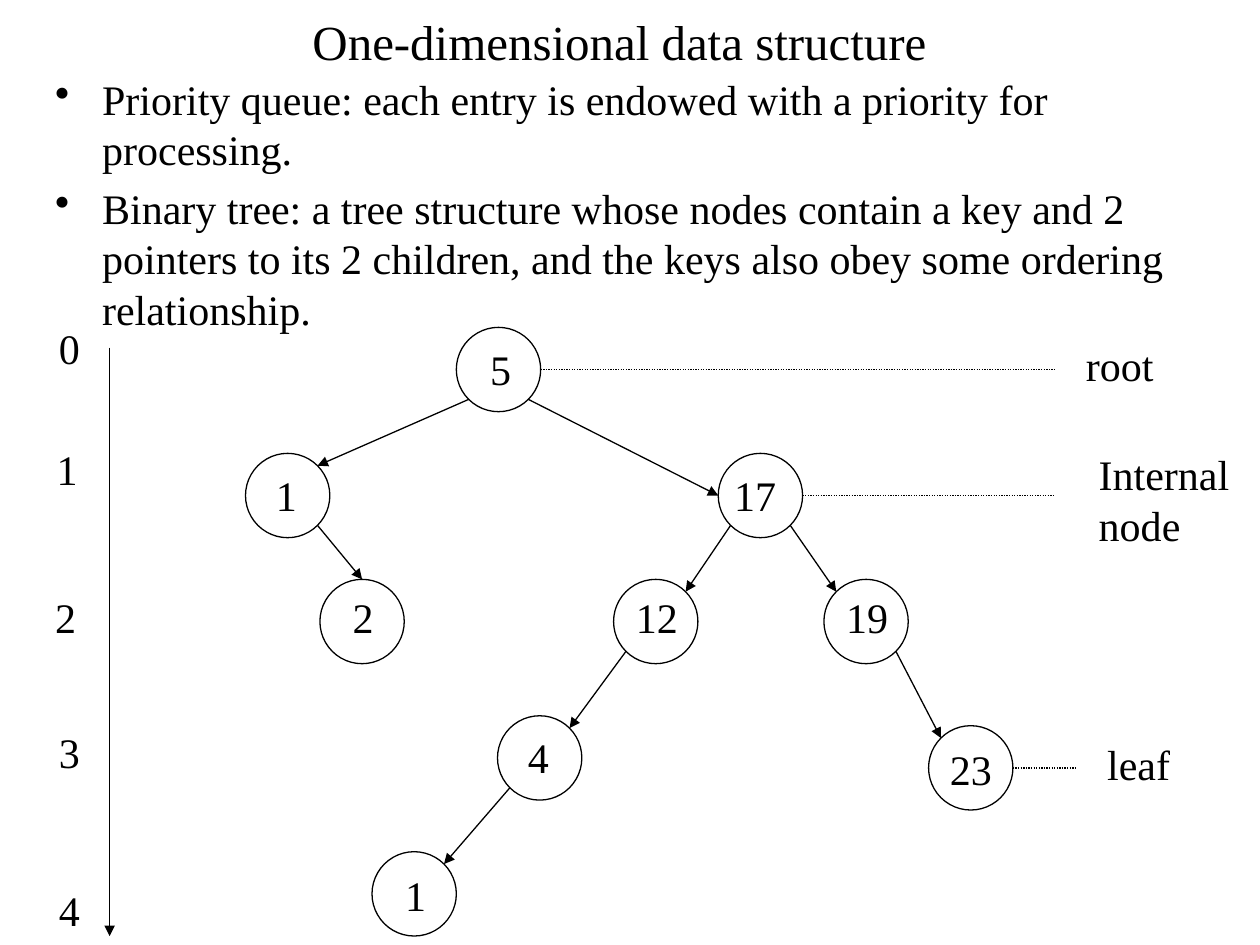
from dataclasses import dataclass
from math import sqrt

from lxml import etree
from pptx import Presentation
from pptx.dml.color import RGBColor
from pptx.enum.dml import MSO_LINE
from pptx.enum.shapes import MSO_CONNECTOR, MSO_SHAPE
from pptx.enum.text import MSO_ANCHOR, MSO_AUTO_SIZE, PP_ALIGN
from pptx.oxml.ns import qn
from pptx.util import Cm, Pt

STRAIGHT = MSO_CONNECTOR.STRAIGHT
OVAL = MSO_SHAPE.OVAL
DOTTED = MSO_LINE.ROUND_DOT
FIT_SHAPE = MSO_AUTO_SIZE.SHAPE_TO_FIT_TEXT
MIDDLE = MSO_ANCHOR.MIDDLE
CENTER = PP_ALIGN.CENTER

COLORS = {"ink": "000000", "background": "FFFFFF"}
FONT = "Times New Roman"
TEXT_SIZE = 24
DIAMETER = 1.7
LABEL_HEIGHT = 1.27
DIAGONAL = 1 / sqrt(2)

# Directions from a node's centre to points on its circle
SITES = {
    "top": (0, -1),
    "left": (-1, 0),
    "right": (1, 0),
    "top right": (DIAGONAL, -DIAGONAL),
    "top left": (-DIAGONAL, -DIAGONAL),
    "bottom left": (-DIAGONAL, DIAGONAL),
    "bottom right": (DIAGONAL, DIAGONAL),
}


@dataclass(frozen=True)
class Node:
    key: str
    left: float
    top: float
    label_left: float
    label_top: float

    def site(self, name: str) -> tuple[float, float]:
        radius = DIAMETER / 2
        across, down = SITES[name]
        return self.left + radius * (1 + across), self.top + radius * (1 + down)


@dataclass(frozen=True)
class Edge:
    parent: str
    parent_site: str
    child: str
    child_site: str


@dataclass(frozen=True)
class Callout:
    node: str
    line_end: float
    lines: tuple[str, ...]
    left: float
    top: float
    width: float


TITLE = "One-dimensional data structure"
BULLETS = (
    "Priority queue: each entry is endowed with a priority for processing.",
    "Binary tree: a tree structure whose nodes contain a key and 2 pointers to its "
    "2 children, and the keys also obey some ordering relationship.",
)
NODES = {
    "root": Node("5", 9.2, 6.6, 9.63, 6.81),
    "one": Node("1", 4.95, 9.14, 5.31, 9.35),
    "seventeen": Node("17", 14.48, 9.14, 14.55, 9.35),
    "two": Node("2", 6.45, 11.68, 6.86, 11.79),
    "twelve": Node("12", 12.37, 11.68, 12.57, 11.79),
    "nineteen": Node("19", 16.61, 11.68, 16.81, 11.79),
    "four": Node("4", 10.03, 14.43, 10.39, 14.63),
    "lowest": Node("1", 7.5, 17.17, 7.92, 17.4),
    "twenty-three": Node("23", 18.72, 14.63, 18.9, 14.86),
}
EDGES = (
    Edge("root", "bottom left", "one", "top right"),
    Edge("root", "bottom right", "seventeen", "left"),
    Edge("one", "bottom right", "two", "top"),
    Edge("seventeen", "bottom left", "twelve", "top right"),
    Edge("seventeen", "bottom right", "nineteen", "top left"),
    Edge("twelve", "bottom left", "four", "top right"),
    Edge("four", "bottom left", "lowest", "top right"),
    Edge("nineteen", "bottom right", "twenty-three", "top left"),
)
CALLOUTS = (
    Callout("root", 21.26, ("root",), 21.64, 6.71, 1.88),
    Callout("seventeen", 21.26, ("Internal", "node"), 21.9, 8.92, 3.35),
    Callout("twenty-three", 21.7, ("leaf",), 22.07, 14.76, 1.78),
)
LEVEL_POSITIONS = ((0.94, 6.38), (0.89, 8.81), (0.86, 11.79), (0.94, 14.53), (0.94, 17.7))


def color(name: str) -> RGBColor:
    return RGBColor.from_string(COLORS[name])


def add_run(paragraph, text: str, size: float = TEXT_SIZE) -> None:
    run = paragraph.add_run()
    run.text = text
    run.font.name = FONT
    run.font.size = Pt(size)
    run.font.color.rgb = color("ink")


def add_text(slide, lines: tuple[str, ...], left: float, top: float, width: float,
             height: float, size: float = TEXT_SIZE, wrap: bool = True):
    frame = slide.shapes.add_textbox(Cm(left), Cm(top), Cm(width), Cm(height)).text_frame
    frame.word_wrap = wrap
    for index, line in enumerate(lines):
        paragraph = frame.add_paragraph() if index else frame.paragraphs[0]
        add_run(paragraph, line, size)
    return frame


def add_label(slide, lines: tuple[str, ...], left: float, top: float, width: float) -> None:
    height = LABEL_HEIGHT + 1.02 * (len(lines) - 1)
    frame = add_text(slide, lines, left, top, width, height, wrap=False)
    frame.auto_size = FIT_SHAPE


def add_bullet(paragraph) -> None:
    paragraph.space_before = Pt(TEXT_SIZE * 0.2)
    properties = paragraph._p.get_or_add_pPr()
    properties.set("marL", str(Cm(0.95)))
    properties.set("indent", str(Cm(-0.95)))
    etree.SubElement(properties, qn("a:buChar"), char="•")


def add_line(slide, start: tuple[float, float], end: tuple[float, float],
             dotted: bool = False) -> None:
    connector = slide.shapes.add_connector(STRAIGHT, *map(Cm, start + end))
    connector.line.color.rgb = color("ink")
    connector.line.width = Pt(0.75)
    if dotted:
        connector.line.dash_style = DOTTED
    else:
        etree.SubElement(connector.line._get_or_add_ln(), qn("a:tailEnd"), type="triangle")
    etree.SubElement(connector._element.spPr, qn("a:effectLst"))


def add_node(slide, node: Node) -> None:
    shape = slide.shapes.add_shape(OVAL, *map(Cm, (node.left, node.top, DIAMETER, DIAMETER)))
    shape.shadow.inherit = False
    shape.fill.background()
    shape.line.color.rgb = color("ink")
    shape.line.width = Pt(0.75)


def main() -> None:
    presentation = Presentation()
    presentation.slide_width, presentation.slide_height = Cm(25.4), Cm(19.05)
    slide = presentation.slides.add_slide(presentation.slide_layouts[6])
    slide.background.fill.solid()
    slide.background.fill.fore_color.rgb = color("background")

    # Title and definitions
    title = add_text(slide, (TITLE,), 5.72, 0.2, 13.54, 1.27, size=28)
    title.vertical_anchor = MIDDLE
    title.paragraphs[0].alignment = CENTER
    for paragraph in add_text(slide, BULLETS, 0.86, 1.35, 23.93, 5.36).paragraphs:
        add_bullet(paragraph)

    # Binary tree
    for node in NODES.values():
        add_node(slide, node)
    for edge in EDGES:
        add_line(slide, NODES[edge.parent].site(edge.parent_site),
                 NODES[edge.child].site(edge.child_site))
    for node in NODES.values():
        add_label(slide, (node.key,), node.label_left, node.label_top,
                  0.51 + 0.42 * len(node.key))

    # Names of the node kinds
    for callout in CALLOUTS:
        start = NODES[callout.node].site("right")
        add_line(slide, start, (callout.line_end, start[1]), dotted=True)
        add_label(slide, callout.lines, callout.left, callout.top, callout.width)

    # Depth axis
    add_line(slide, (2.21, 7.01), (2.21, 18.87))
    for level, (left, top) in enumerate(LEVEL_POSITIONS):
        add_label(slide, (str(level),), left, top, 0.93)

    presentation.save("out.pptx")


if __name__ == "__main__":
    main()
